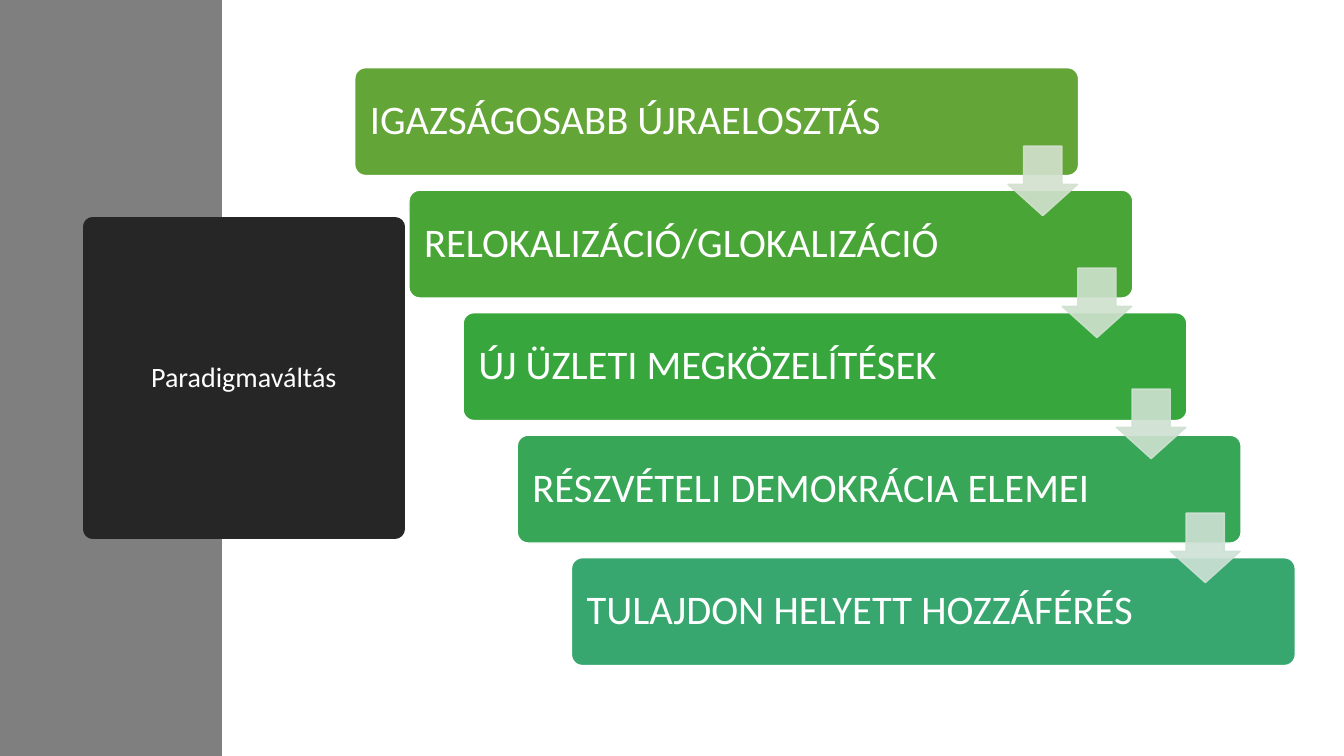
"""Build the paradigm shift slide with a staircase of five steps."""
from lxml.etree import SubElement
from pptx import Presentation
from pptx.dml.color import RGBColor
from pptx.enum.shapes import MSO_SHAPE
from pptx.enum.text import MSO_ANCHOR, PP_ALIGN
from pptx.oxml.ns import qn
from pptx.util import Pt

TITLE = "Paradigmaváltás"
STEPS = [
    ("IGAZSÁGOSABB ÚJRAELOSZTÁS", "63A537"),
    ("RELOKALIZÁCIÓ/GLOKALIZÁCIÓ", "4AA537"),
    ("ÚJ ÜZLETI MEGKÖZELÍTÉSEK", "37A63D"),
    ("RÉSZVÉTELI DEMOKRÁCIA ELEMEI", "37A656"),
    ("TULAJDON HELYETT HOZZÁFÉRÉS", "37A76F"),
]
ARROWS = [("D3E1CE", 104.4), ("CFE1CE", 191.5), ("CEE1D1", 277.9), ("CEE1D5", 366.5)]
THEME = {
    "font": "Calibri",
    "title_size": 20,
    "step_size": 29,
    "text": "FFFFFF",
    "outline": "FFFFFF",
    "band": "7F7F7F",
    "title_fill": "262626",
    "arrow_opacity": 90,
}
SLIDE_WIDTH, SLIDE_HEIGHT = 960, 540
BAR_LEFT, BAR_TOP, BAR_WIDTH, BAR_HEIGHT = 253.4, 48.4, 517, 77
STEP_RIGHT, STEP_DOWN = 38.7, 87.5
ARROW_LEFT, ARROW_SIZE = 720, 49.7


def add_box(slide, kind, bounds, fill, line=None, line_width=1):
    """Add a flat shape with an optional outline."""
    shape = slide.shapes.add_shape(kind, *(Pt(value) for value in bounds))
    shape.shadow.inherit = False
    shape.fill.solid()
    shape.fill.fore_color.rgb = RGBColor.from_string(fill)
    if line:
        shape.line.color.rgb = RGBColor.from_string(line)
        shape.line.width = Pt(line_width)
    else:
        shape.line.fill.background()
    return shape


def set_text(shape, text, size, alignment, margin):
    """Write one vertically centred paragraph into a shape."""
    frame = shape.text_frame
    frame.word_wrap = True
    frame.vertical_anchor = MSO_ANCHOR.MIDDLE
    frame.margin_left = frame.margin_right = Pt(margin)
    paragraph = frame.paragraphs[0]
    paragraph.text = text
    paragraph.alignment = alignment
    paragraph.line_spacing = 0.9
    paragraph.font.name = THEME["font"]
    paragraph.font.size = Pt(size)
    paragraph.font.color.rgb = RGBColor.from_string(THEME["text"])


def set_opacity(shape, percent):
    """Make the fill and outline of a shape partly transparent."""
    for color in shape.element.spPr.iter(qn("a:srgbClr")):
        SubElement(color, qn("a:alpha"), val=str(percent * 1000))


def main():
    """Draw the slide and save it."""
    presentation = Presentation()
    presentation.slide_width = Pt(SLIDE_WIDTH)
    presentation.slide_height = Pt(SLIDE_HEIGHT)
    slide = presentation.slides.add_slide(presentation.slide_layouts[6])

    add_box(slide, MSO_SHAPE.RECTANGLE, (0, 0, 158.6, SLIDE_HEIGHT), THEME["band"])
    title = add_box(slide, MSO_SHAPE.RECTANGLE, (66.2, 162, 216, 216),
                    THEME["title_fill"], THEME["title_fill"], 13.75)
    SubElement(title.line._ln, qn("a:round"))
    set_text(title, TITLE, THEME["title_size"], PP_ALIGN.CENTER, 7.2)

    for index, (text, color) in enumerate(STEPS):
        bounds = (BAR_LEFT + index * STEP_RIGHT, BAR_TOP + index * STEP_DOWN,
                  BAR_WIDTH, BAR_HEIGHT)
        bar = add_box(slide, MSO_SHAPE.ROUNDED_RECTANGLE, bounds, color, THEME["outline"])
        bar.adjustments[0] = 0.1
        set_text(bar, text, THEME["step_size"], PP_ALIGN.LEFT, 8.6)

    for index, (color, top) in enumerate(ARROWS):
        bounds = (ARROW_LEFT + index * STEP_RIGHT, top, ARROW_SIZE, ARROW_SIZE)
        arrow = add_box(slide, MSO_SHAPE.DOWN_ARROW, bounds, color, color)
        arrow.adjustments[0] = 0.55
        arrow.adjustments[1] = 0.45
        set_opacity(arrow, THEME["arrow_opacity"])

    presentation.save("out.pptx")


if __name__ == "__main__":
    main()
